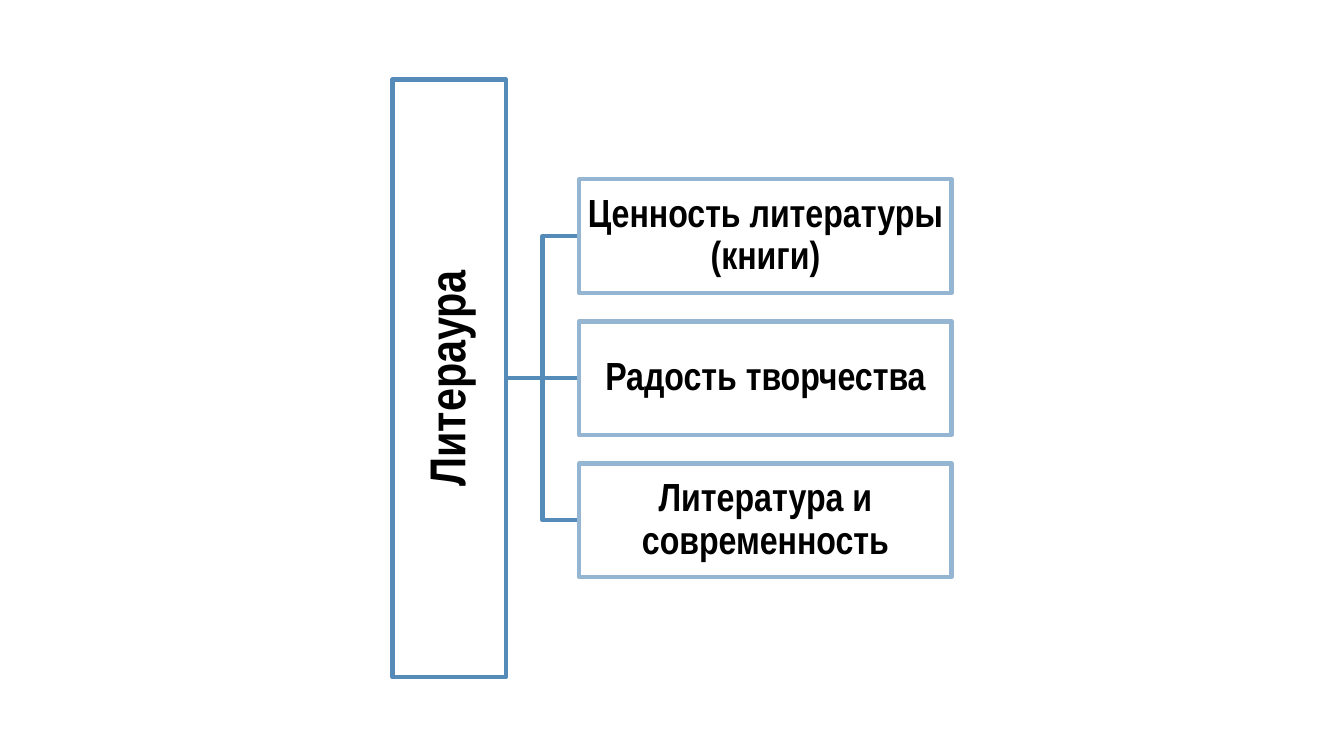
import pptx
import pptx.dml.color
import pptx.enum.shapes
import pptx.enum.text
import pptx.oxml
import pptx.util
from pptx.util import Cm

ROOT = "Литераура"
BRANCHES = ["Ценность литературы (книги)", "Радость творчества", "Литература и современность"]

WHITE = pptx.dml.color.RGBColor(0xFF, 0xFF, 0xFF)
BLACK = pptx.dml.color.RGBColor(0x00, 0x00, 0x00)
DARK_BLUE = pptx.dml.color.RGBColor(0x55, 0x8B, 0xB8)
LIGHT_BLUE = pptx.dml.color.RGBColor(0x94, 0xB6, 0xD2)
FONT = "Arial Narrow"
LINE_WIDTH = pptx.util.Pt(3)

# Lengths in centimetres
MIDDLE_Y = 9.53
BOX_HEIGHT = 2.86
ROOT_LENGTH = 15.06
ROOT_CENTER_X = 11.32
BRANCH_LEFT = 14.6
BRANCH_WIDTH = 9.38
BRANCH_PITCH = 3.58


def add_box(slide, text, center_x, center_y, width, size, color, inset, rotation=0):
    shape = slide.shapes.add_shape(
        pptx.enum.shapes.MSO_SHAPE.RECTANGLE,
        Cm(center_x - width / 2), Cm(center_y - BOX_HEIGHT / 2), Cm(width), Cm(BOX_HEIGHT))
    shape.rotation = rotation
    shape.shadow.inherit = False
    shape.fill.solid()
    shape.fill.fore_color.rgb = WHITE
    shape.line.color.rgb = color
    shape.line.width = LINE_WIDTH
    frame = shape.text_frame
    frame.word_wrap = True
    frame.vertical_anchor = pptx.enum.text.MSO_ANCHOR.MIDDLE
    frame.margin_left = frame.margin_right = Cm(inset)
    frame.margin_top = frame.margin_bottom = Cm(inset)
    paragraph = frame.paragraphs[0]
    paragraph.text = text
    paragraph.alignment = pptx.enum.text.PP_ALIGN.CENTER
    paragraph.line_spacing = 0.9
    paragraph.font.name = FONT
    paragraph.font.size = pptx.util.Pt(size)
    paragraph.font.bold = True
    paragraph.font.color.rgb = BLACK


def add_branch_line(slide, end_y):
    """Join the root's right edge to a branch's left edge."""
    kinds = pptx.enum.shapes.MSO_CONNECTOR
    kind = kinds.STRAIGHT if end_y == MIDDLE_Y else kinds.ELBOW
    connector = slide.shapes.add_connector(
        kind, Cm(ROOT_CENTER_X + BOX_HEIGHT / 2), Cm(MIDDLE_Y), Cm(BRANCH_LEFT), Cm(end_y))
    connector.line.color.rgb = DARK_BLUE
    connector.line.width = LINE_WIDTH
    properties = connector._element.spPr
    properties.append(properties.makeelement(pptx.oxml.ns.qn("a:effectLst"), {}))


def main():
    presentation = pptx.Presentation()
    presentation.slide_width = Cm(33.87)
    presentation.slide_height = Cm(19.05)
    slide = presentation.slides.add_slide(presentation.slide_layouts[6])

    middle_index = (len(BRANCHES) - 1) / 2
    centers = [MIDDLE_Y + (index - middle_index) * BRANCH_PITCH for index in range(len(BRANCHES))]
    for center_y in centers:
        add_branch_line(slide, center_y)
    add_box(slide, ROOT, ROOT_CENTER_X, MIDDLE_Y, ROOT_LENGTH, 36, DARK_BLUE, 0.06, rotation=270)
    for text, center_y in zip(BRANCHES, centers):
        add_box(slide, text, BRANCH_LEFT + BRANCH_WIDTH / 2, center_y, BRANCH_WIDTH,
                28, LIGHT_BLUE, 0.05)

    presentation.save("out.pptx")


if __name__ == "__main__":
    main()
